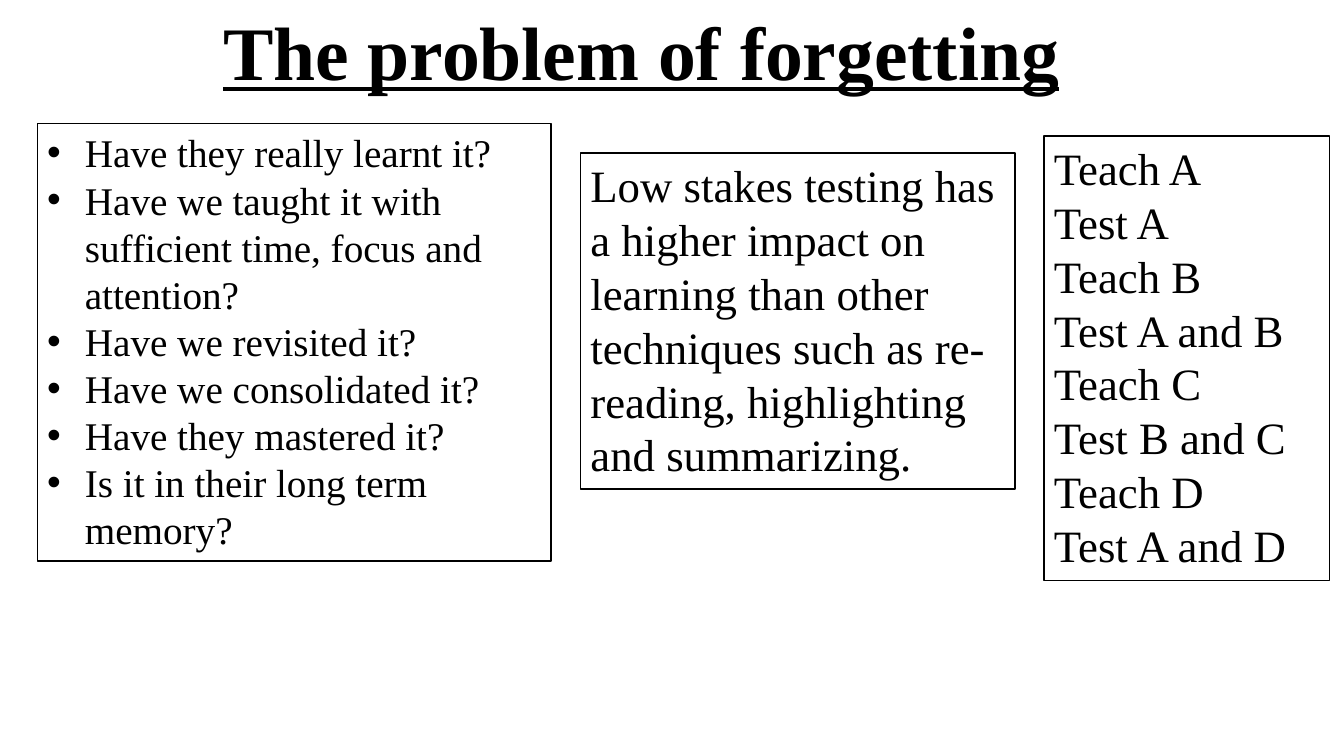
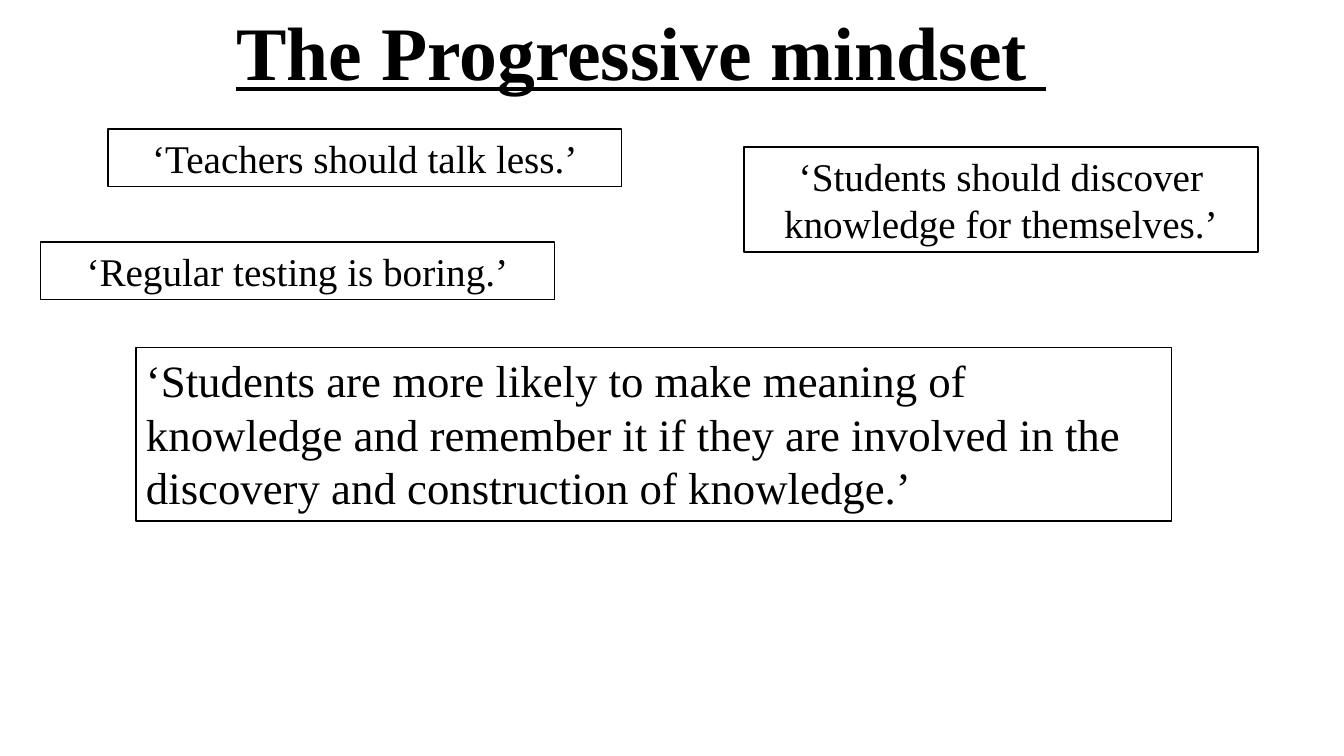
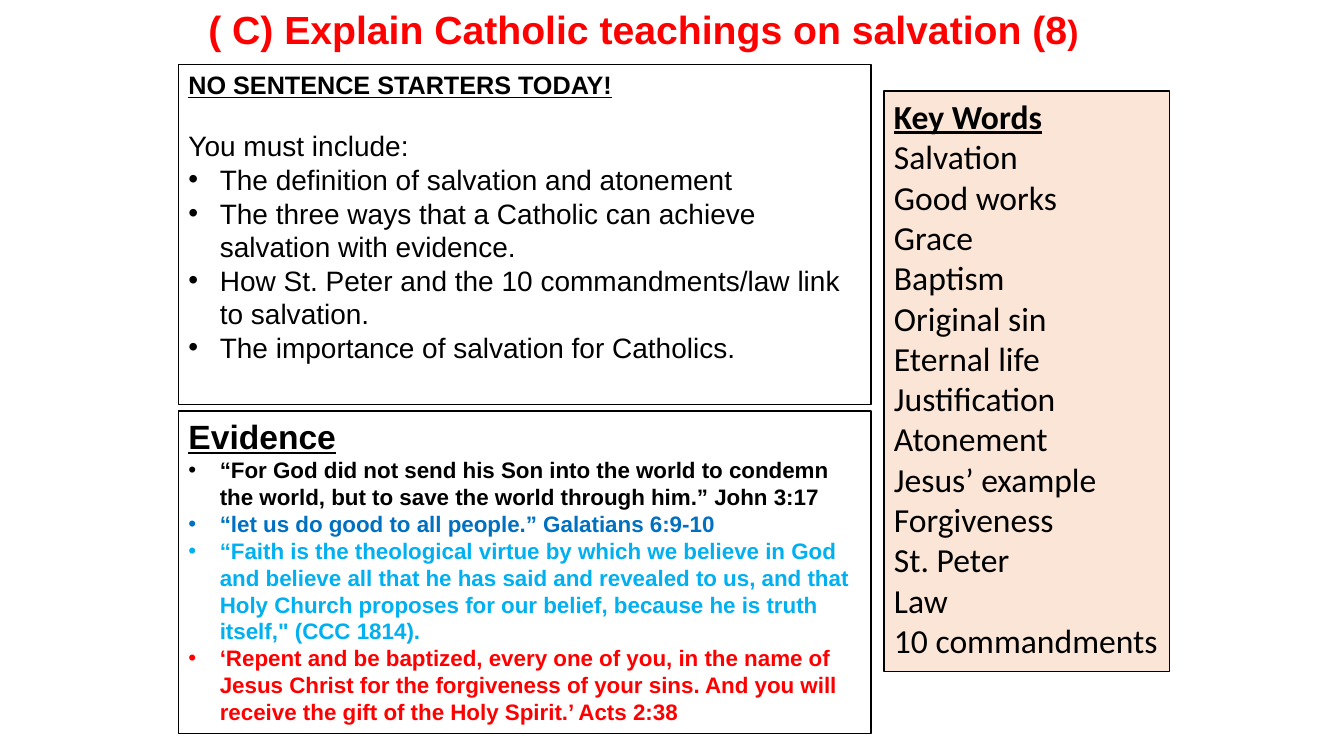
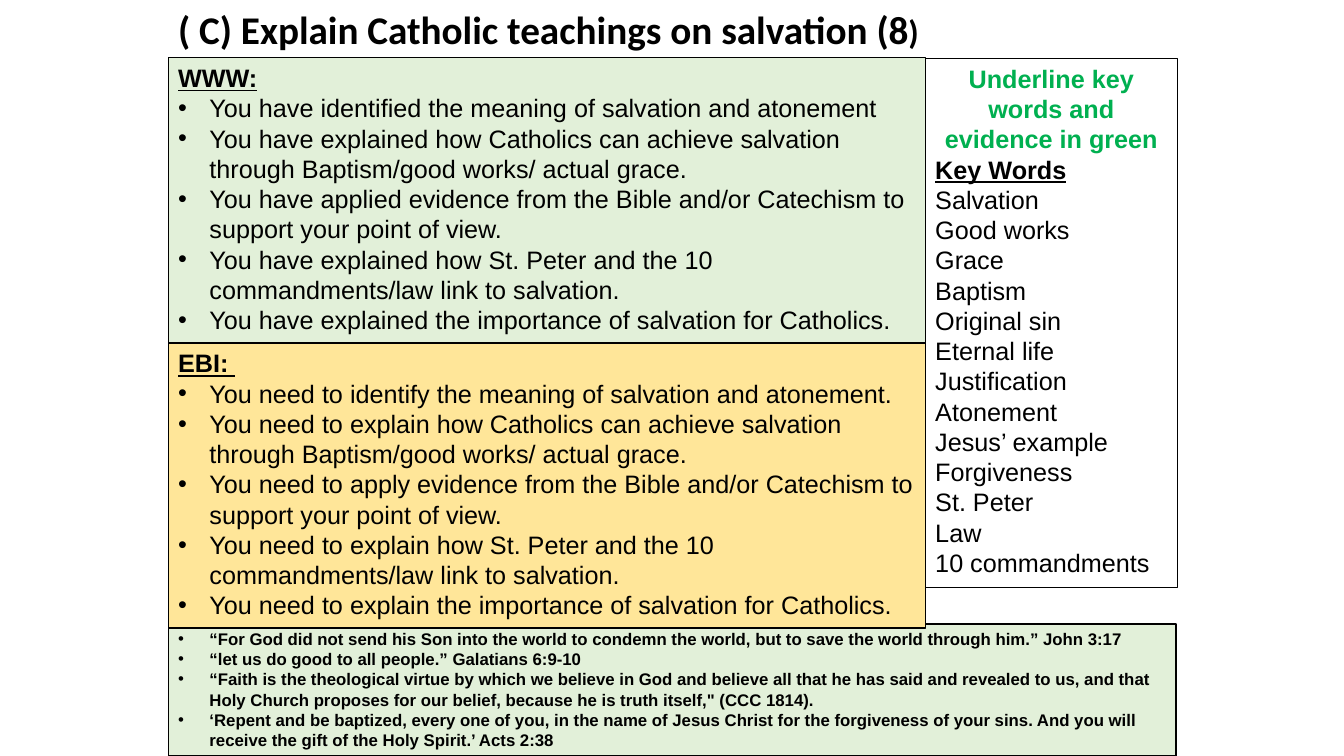
from pptx import Presentation
from pptx.dml.color import RGBColor
from pptx.enum.text import PP_ALIGN
from pptx.oxml.ns import qn
from pptx.util import Cm, Pt
from lxml.etree import SubElement

BLACK, WHITE, RED, GREEN = "000000", "FFFFFF", "FF0000", "00B050"
PEACH, PALE_GREEN, YELLOW = "FBE5D6", "E2F0D9", "FFE699"
SERIF, SANS, ROUND = "Times New Roman", "Arial", "Calibri"
HEADING = {"bold": True, "underline": True}
CENTRED = {"centred": True}


def rgb(value):
    return RGBColor.from_string(value)


def add_text(page, place, lines, font, size, fill=None, wrap=True):
    box = page.shapes.add_textbox(*[Cm(length) for length in place])
    if fill:
        box.fill.solid()
        box.fill.fore_color.rgb = rgb(fill)
        box.line.color.rgb = rgb(BLACK)
        box.line.width = Pt(1)
    frame = box.text_frame
    frame.word_wrap = wrap
    for index, (text, style) in enumerate(lines):
        para = frame.add_paragraph() if index else frame.paragraphs[0]
        para.add_run().text = text
        para.font.name = font
        para.font.size = Pt(style.get("size", size))
        para.font.bold = style.get("bold", False)
        para.font.underline = style.get("underline", False)
        para.font.color.rgb = rgb(style.get("color", BLACK))
        para.alignment = PP_ALIGN.CENTER if style.get("centred") else PP_ALIGN.LEFT
        if "before" in style:
            para.space_before = Pt(style["before"])
        if "indent" in style:
            properties = para._p.get_or_add_pPr()
            properties.set("marL", str(Cm(style["indent"])))
            properties.set("indent", str(-Cm(style["indent"])))
            bullet_font = SubElement(properties, qn("a:buFont"))
            bullet_font.set("typeface", "Arial")
            SubElement(properties, qn("a:buChar")).set("char", "•")
            properties.append(properties.find(qn("a:defRPr")))
    return box


deck = Presentation()
deck.slide_width, deck.slide_height = Cm(33.87), Cm(19.05)
pages = [deck.slides.add_slide(deck.slide_layouts[6]) for _ in range(4)]
forgetting, mindset, task, feedback = pages

for page, title in [(forgetting, "The problem of forgetting"),
                    (mindset, "The Progressive mindset ")]:
    add_text(page, (5.16, 0, 22, 2.57), [(title, HEADING | CENTRED)], SERIF, 54, wrap=False)

for page, left, font, color in [(task, 5, SANS, RED), (feedback, 4.24, ROUND, BLACK)]:
    question = "( C) Explain Catholic teachings on salvation (8"
    box = add_text(page, (left, 0, 24, 1.45),
                   [(question, {"bold": True, "color": color})], font, 28)
    span = box.text_frame.paragraphs[0].add_run()
    span.text = ")"
    span.font.size = Pt(24)

checks = [
    "Have they really learnt it?",
    "Have we taught it with sufficient time, focus and attention?",
    "Have we revisited it?",
    "Have we consolidated it?",
    "Have they mastered it?",
    "Is it in their long term memory?",
]
add_text(forgetting, (0.94, 3.12, 12.95, 11.02),
         [(check, {"indent": 0.95}) for check in checks], SERIF, 28, WHITE)
add_text(forgetting, (14.63, 3.86, 10.95, 8.46),
         [("Low stakes testing has a higher impact on learning than other techniques "
           "such as re-reading, highlighting and summarizing.", {})], SERIF, 32, WHITE)
sequence = ["Teach A", "Test A", "Teach B", "Test A and B",
            "Teach C", "Test B and C", "Teach D", "Test A and D"]
add_text(forgetting, (26.31, 3.43, 7.19, 11.2),
         [(step, {}) for step in sequence], SERIF, 32, WHITE)

for left, top, height, opinion in [
    (2.72, 3.25, 1.45, "‘Teachers should talk less.’"),
    (18.75, 3.71, 2.64, "‘Students should discover knowledge for themselves.’"),
    (1.02, 6.1, 1.45, "‘Regular testing is boring.’"),
]:
    add_text(mindset, (left, top, 12.95, height), [(opinion, CENTRED)], SERIF, 28, WHITE)
add_text(mindset, (3.43, 8.76, 26.09, 4.37),
         [("‘Students are more likely to make meaning of knowledge and remember it "
           "if they are involved in the discovery and construction of knowledge.’", {})],
         SERIF, 32, WHITE)

words = ["Salvation", "Good works", "Grace", "Baptism", "Original sin", "Eternal life",
         "Justification", "Atonement", "Jesus’ example", "Forgiveness", "St. Peter",
         "Law", "10 commandments"]
key_words = [("Key Words", HEADING)] + [(word, {}) for word in words]
evidence = [
    ("“For God did not send his Son into the world to condemn the world, "
     "but to save the world through him.” John 3:17", BLACK),
    ("“let us do good to all people.” Galatians 6:9-10", "0070C0"),
    ("“Faith is the theological virtue by which we believe in God and believe all that "
     "he has said and revealed to us, and that Holy Church proposes for our belief, "
     'because he is truth itself," (CCC 1814).', "00B0F0"),
    ("‘Repent and be baptized, every one of you, in the name of Jesus Christ for the "
     "forgiveness of your sins. And you will receive the gift of the Holy Spirit.’ "
     "Acts 2:38", RED),
]
bullet = {"indent": 0.79}
bold_bullet = bullet | {"bold": True}

add_text(task, (22.28, 2.29, 7.19, 14.63), key_words, ROUND, 24, PEACH)
add_text(task, (4.5, 10.36, 17.45, 8.13),
         [("Evidence", HEADING | {"size": 24})]
         + [(quote, bold_bullet | {"color": color}) for quote, color in evidence],
         SANS, 16, WHITE)
requirements = [
    "The definition of salvation and atonement",
    "The three ways that a Catholic can achieve salvation with evidence.",
    "How St. Peter and the 10 commandments/law link to salvation.",
    "The importance of salvation for Catholics.",
]
add_text(task, (4.5, 1.63, 17.45, 8.56),
         [("NO SENTENCE STARTERS TODAY!", HEADING | {"size": 18}),
          ("You must include:", {"before": 20.7})]
         + [(requirement, bullet) for requirement in requirements], SANS, 20, WHITE)

reminder = ("Underline key words and evidence in green",
            CENTRED | {"bold": True, "color": GREEN})
add_text(feedback, (23.32, 1.47, 6.35, 13.34), [reminder] + key_words, SANS, 18, WHITE)
add_text(feedback, (4.24, 15.72, 25.4, 3.33),
         [(quote, bold_bullet) for quote, _ in evidence], SANS, 12, PALE_GREEN)

strengths = [
    "You have identified the meaning of salvation and atonement",
    "You have explained how Catholics can achieve salvation through "
    "Baptism/good works/ actual grace.",
    "You have applied evidence from the Bible and/or Catechism to support your point of view.",
    "You have explained how St. Peter and the 10 commandments/law link to salvation.",
    "You have explained the importance of salvation for Catholics.",
]
targets = [
    "You need to identify the meaning of salvation and atonement.",
    "You need to explain how Catholics can achieve salvation through "
    "Baptism/good works/ actual grace.",
    "You need to apply evidence from the Bible and/or Catechism to support your point of view.",
    "You need to explain how St. Peter and the 10 commandments/law link to salvation.",
    "You need to explain the importance of salvation for Catholics.",
]
panel_height = 7.19
for row, (heading, comments, fill) in enumerate([("WWW:", strengths, PALE_GREEN),
                                                 ("EBI: ", targets, YELLOW)]):
    add_text(feedback, (4.24, 1.45 + row * panel_height, 19.08, panel_height),
             [(heading, HEADING)] + [(comment, bullet) for comment in comments],
             SANS, 18, fill)

deck.save("out.pptx")
